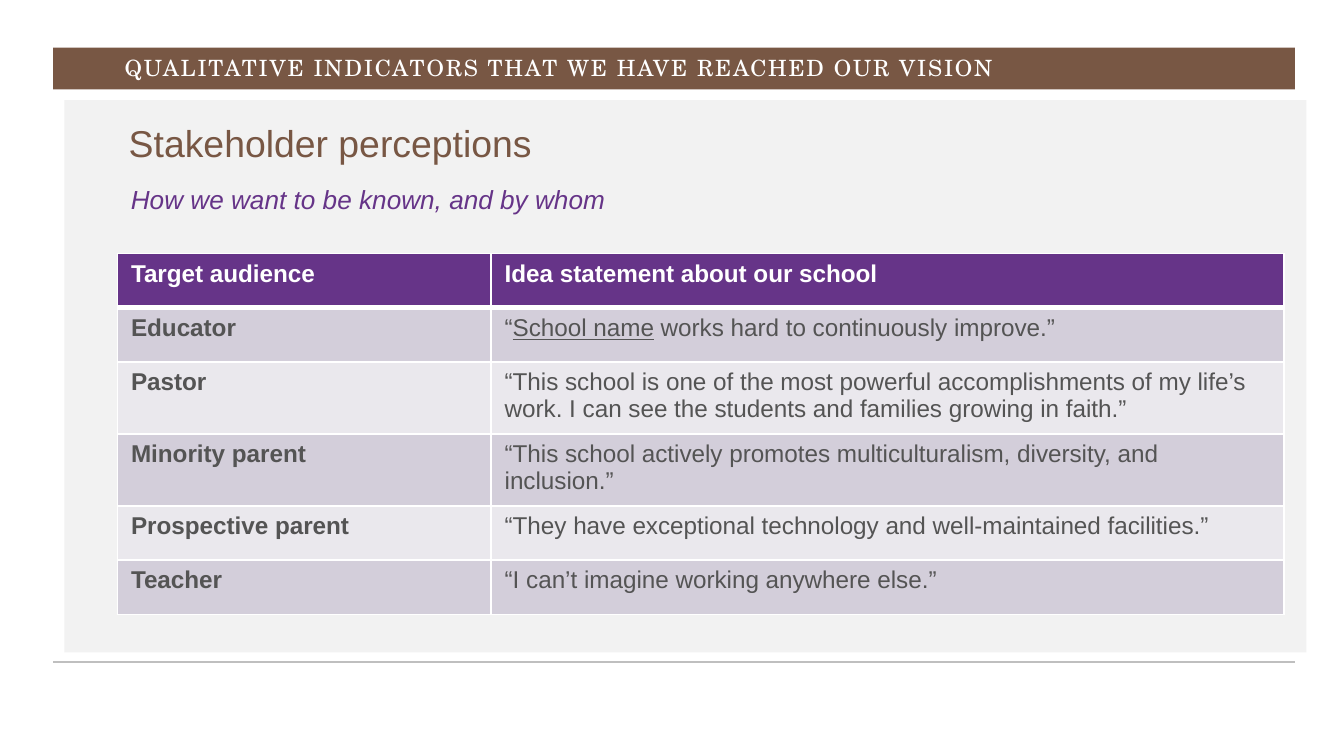
from dataclasses import dataclass
from typing import NamedTuple

from lxml.etree import SubElement
from pptx import Presentation
from pptx.dml.color import RGBColor
from pptx.enum.shapes import MSO_CONNECTOR, MSO_SHAPE
from pptx.enum.text import MSO_ANCHOR
from pptx.oxml.ns import qn
from pptx.util import Inches, Pt


@dataclass(frozen=True)
class Theme:
    brown: str = "785744"
    purple: str = "663488"
    panel: str = "F2F2F2"
    rule: str = "BFBFBF"
    white: str = "FFFFFF"
    body: str = "545454"
    bands: tuple[str, str] = ("D3CEDA", "EAE8ED")
    font: str = "Arial"
    banner_font: str = "TeX Gyre Schola"
    banner_size: float = 12
    title_size: float = 20
    subtitle_size: float = 14
    table_size: float = 13


class Area(NamedTuple):
    column: float
    row: float
    columns: float
    rows: float


class Perception(NamedTuple):
    audience: str
    statement: str
    underlined: str = ""


THEME = Theme()
GRID_COLUMNS, GRID_ROWS = 100, 56.25
PANEL = Area(4.8, 7.45, 92.4, 41.1)
BANNER = Area(3.95, 3.55, 92.4, 3.1)
BANNER_TEXT = Area(8.3, 3.1, 82.3, 4.1)
TITLE = Area(8.6, 8.45, 39.4, 4.8)
SUBTITLE = Area(8.75, 13.15, 40.6, 3.4)
TABLE = Area(8.75, 18.85, 86.8, 26.9)
AUDIENCE_COLUMNS = 27.8
TABLE_ROW = 4.05
FOOTER_ROW = 49.25

PERCEPTIONS = [
    Perception("Target audience", "Idea statement about our school"),
    Perception("Educator", "“School name works hard to continuously improve.”", "School name"),
    Perception(
        "Pastor",
        "“This school is one of the most powerful accomplishments of my life’s work. "
        "I can see the students and families growing in faith.”",
    ),
    Perception(
        "Minority parent",
        "“This school actively promotes multiculturalism, diversity, and inclusion.”",
    ),
    Perception("Prospective parent", "“They have exceptional technology and well-maintained facilities.”"),
    Perception("Teacher", "“I can’t imagine working anywhere else.”"),
]


def grid(cells: float) -> int:
    return Inches(cells * 10 / GRID_COLUMNS)


def place(area: Area) -> list[int]:
    return [grid(cells) for cells in area]


def write(text_frame, text: str, *, size: float, color: str, font: str = THEME.font,
          bold: bool = False, italic: bool = False, underlined: str = "",
          spacing: float = 0, line_spacing: float | None = None) -> None:
    paragraph = text_frame.paragraphs[0]
    paragraph.line_spacing = line_spacing
    before, marked, after = text.partition(underlined) if underlined else (text, "", "")
    for part in filter(None, (before, marked, after)):
        run = paragraph.add_run()
        run.text = part
        run.font.name = font
        run.font.size = Pt(size)
        run.font.bold = bold
        run.font.italic = italic
        run.font.underline = part == underlined
        run.font.color.rgb = RGBColor.from_string(color)
        if spacing:
            run._r.get_or_add_rPr().set("spc", str(round(spacing * 100)))


def add_rectangle(slide, area: Area, color: str) -> None:
    shape = slide.shapes.add_shape(MSO_SHAPE.RECTANGLE, *place(area))
    shape.shadow.inherit = False
    shape.fill.solid()
    shape.fill.fore_color.rgb = RGBColor.from_string(color)
    shape.line.fill.background()


def add_rule(slide, row: float) -> None:
    left, right = grid(BANNER.column), grid(BANNER.column + BANNER.columns)
    connector = slide.shapes.add_connector(MSO_CONNECTOR.STRAIGHT, left, grid(row), right, grid(row))
    connector.line.color.rgb = RGBColor.from_string(THEME.rule)
    connector.line.width = Pt(0.75)
    SubElement(connector._element.spPr, qn("a:effectLst"))


def add_text(slide, area: Area, text: str, anchor: MSO_ANCHOR = MSO_ANCHOR.MIDDLE, **text_format) -> None:
    text_frame = slide.shapes.add_textbox(*place(area)).text_frame
    text_frame.word_wrap = True
    text_frame.vertical_anchor = anchor
    write(text_frame, text, **text_format)


def set_borders(cell, **widths: float) -> None:
    properties = cell._tc.get_or_add_tcPr()
    for position, (side, width) in enumerate(widths.items()):
        border = SubElement(properties, qn(f"a:ln{side}"), w=str(Pt(width)))
        fill = SubElement(border, qn("a:solidFill"))
        SubElement(fill, qn("a:srgbClr"), val=THEME.white)
        properties.insert(position, border)


def add_perception_table(slide, area: Area, perceptions: list[Perception]) -> None:
    frame = slide.shapes.add_table(len(perceptions), 2, *place(area))
    table = frame.table
    table.first_row = table.horz_banding = False
    table.columns[0].width = grid(AUDIENCE_COLUMNS)
    table.columns[1].width = grid(area.columns - AUDIENCE_COLUMNS)
    for index, perception in enumerate(perceptions):
        header = index == 0
        table.rows[index].height = grid(TABLE_ROW)
        background = THEME.purple if header else THEME.bands[(index - 1) % 2]
        for column, text in enumerate((perception.audience, perception.statement)):
            cell = table.cell(index, column)
            cell.fill.solid()
            cell.fill.fore_color.rgb = RGBColor.from_string(background)
            set_borders(cell, L=1, R=1, T=3 if index == 1 else 1, B=3 if header else 1)
            write(cell.text_frame, text, size=THEME.table_size,
                  color=THEME.white if header else THEME.body,
                  bold=header or column == 0,
                  underlined=perception.underlined if column == 1 else "")
    frame.height = grid(area.rows)


def main() -> None:
    presentation = Presentation()
    presentation.slide_width = grid(GRID_COLUMNS)
    presentation.slide_height = grid(GRID_ROWS)
    slide = presentation.slides.add_slide(presentation.slide_layouts[6])
    add_rectangle(slide, PANEL, THEME.panel)
    add_rectangle(slide, BANNER, THEME.brown)
    add_rule(slide, FOOTER_ROW)
    add_text(slide, BANNER_TEXT, "QUALITATIVE INDICATORS THAT WE HAVE REACHED OUR VISION",
             size=THEME.banner_size, color=THEME.white, font=THEME.banner_font,
             spacing=1, line_spacing=0.85)
    add_text(slide, SUBTITLE, "How we want to be known, and by whom", MSO_ANCHOR.TOP,
             size=THEME.subtitle_size, color=THEME.purple, italic=True)
    add_text(slide, TITLE, "Stakeholder perceptions",
             size=THEME.title_size, color=THEME.brown, line_spacing=0.85)
    add_perception_table(slide, TABLE, PERCEPTIONS)
    presentation.save("out.pptx")


if __name__ == "__main__":
    main()
